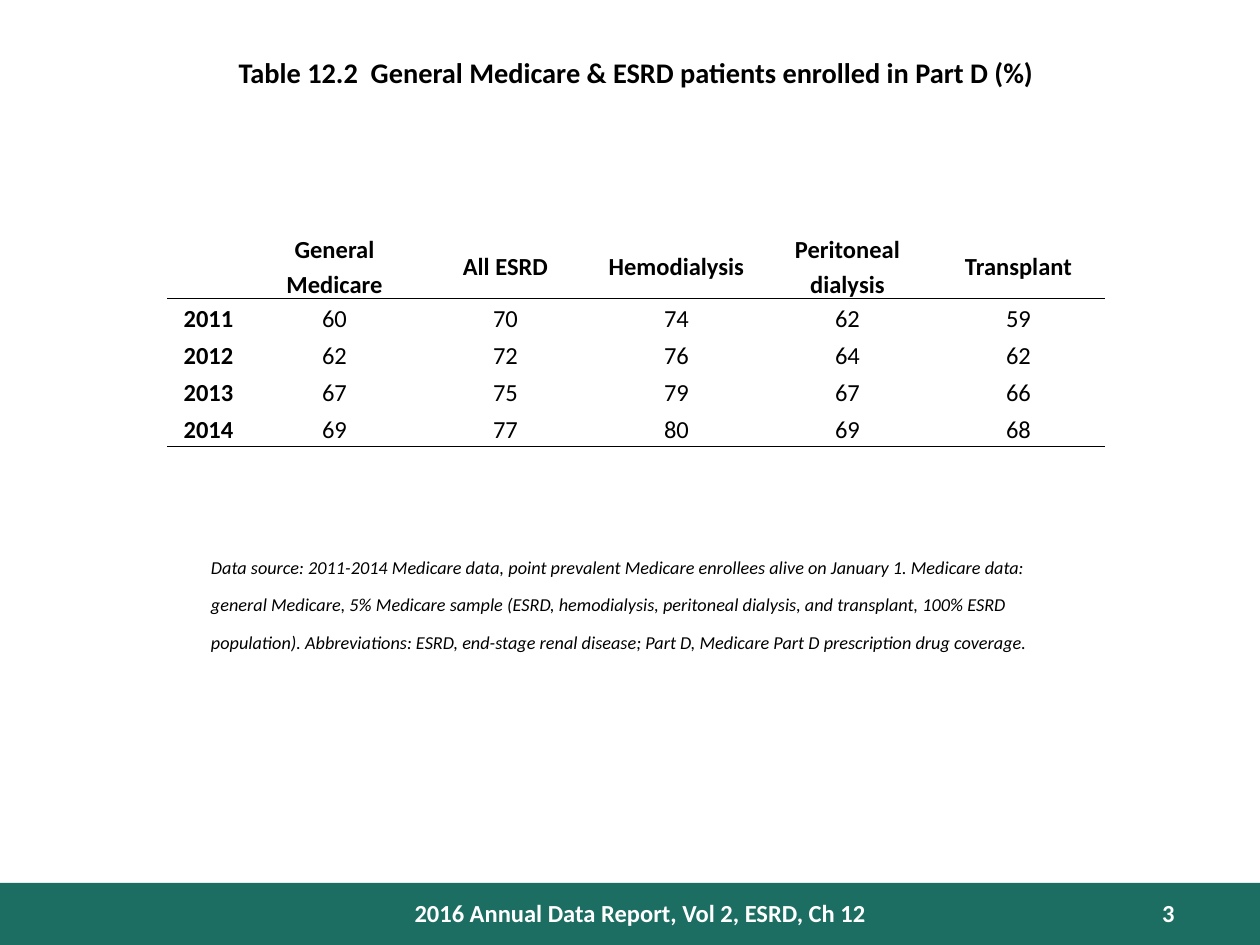
from lxml import etree
from pptx import Presentation
from pptx.dml.color import RGBColor
from pptx.enum.shapes import MSO_SHAPE
from pptx.enum.text import MSO_ANCHOR, PP_ALIGN
from pptx.oxml.ns import qn
from pptx.util import Pt

PX = 914400 // 126
RECT = MSO_SHAPE.RECTANGLE
MIDDLE = MSO_ANCHOR.MIDDLE
LEFT, CENTER, RIGHT = PP_ALIGN.LEFT, PP_ALIGN.CENTER, PP_ALIGN.RIGHT
COLORS = {"green": "1C6E62", "white": "FFFFFF", "black": "000000"}

HEADS = ["", "General Medicare", "All ESRD", "Hemodialysis",
         "Peritoneal dialysis", "Transplant"]
RATES = [
    ["2011", "60", "70", "74", "62", "59"],
    ["2012", "62", "72", "76", "64", "62"],
    ["2013", "67", "75", "79", "67", "66"],
    ["2014", "69", "77", "80", "69", "68"],
]
NOTE = (
    "Data source: 2011-2014 Medicare data, point prevalent Medicare enrollees "
    "alive on January 1. Medicare data: general Medicare, 5% Medicare sample "
    "(ESRD, hemodialysis, peritoneal dialysis, and transplant, 100% ESRD "
    "population). Abbreviations: ESRD, end-stage renal disease; Part D, "
    "Medicare Part D prescription drug coverage."
)


class Deck:
    def __init__(self, wide, high):
        self.prs = Presentation()
        self.prs.slide_width = wide * PX
        self.prs.slide_height = high * PX
        self.slide = self.prs.slides.add_slide(self.prs.slide_layouts[6])
        self.font = "Calibri"

    def color(self, name):
        return RGBColor.from_string(COLORS[name])

    def put_text(self, para, text, size, color="black", align=CENTER, lift=0, **form):
        para.alignment = align
        run = para.add_run()
        run.text = text
        style = {"name": self.font, "size": Pt(size), **form}
        for key, value in style.items():
            setattr(run.font, key, value)
        run.font.color.rgb = self.color(color)
        if lift:
            run._r.get_or_add_rPr().set("baseline", str(lift * 1000))

    def band(self, left, top, wide, high, color):
        box = self.slide.shapes.add_shape(
            RECT, left * PX, top * PX, wide * PX, high * PX)
        box.shadow.inherit = False
        box.fill.solid()
        box.fill.fore_color.rgb = self.color(color)
        box.line.fill.background()

    def label(self, left, top, wide, high, text, size, inset=12, **form):
        box = self.slide.shapes.add_textbox(
            left * PX, top * PX, wide * PX, high * PX)
        frame = box.text_frame
        frame.word_wrap = True
        frame.margin_left = inset * PX
        self.put_text(frame.paragraphs[0], text, size, **form)

    def rule(self, cell, side):
        line = etree.SubElement(cell._tc.get_or_add_tcPr(), qn("a:" + side), w=str(Pt(1)))
        fill = etree.SubElement(line, qn("a:solidFill"))
        etree.SubElement(fill, qn("a:srgbClr"), val=COLORS["black"])

    def table(self, left, top, cols, high, rows):
        last = len(rows) - 1
        grid = self.slide.shapes.add_table(
            len(rows), len(cols), left * PX, top * PX,
            sum(cols) * PX, high * len(rows) * PX).table
        grid.first_row = grid.horz_banding = False
        for col, wide in zip(grid.columns, cols):
            col.width = wide * PX
        edges = {0: "lnB", 1: "lnT", last: "lnB"}
        cell_style = {"margin_left": 9 * PX, "margin_right": 9 * PX,
                      "margin_top": 0, "margin_bottom": 0,
                      "vertical_anchor": MIDDLE}
        for r, row in enumerate(rows):
            grid.rows[r].height = high * PX
            for c, text in enumerate(row):
                cell = grid.cell(r, c)
                for key, value in cell_style.items():
                    setattr(cell, key, value)
                if r in edges:
                    self.rule(cell, edges[r])
                cell.fill.background()
                if text:
                    para = cell.text_frame.paragraphs[0]
                    para.line_spacing = 1.15
                    self.put_text(para, text, 14, bold=r == 0 or c == 0)


def main():
    deck = Deck(1260, 945)
    deck.band(0, 883, 1260, 62, "green")
    deck.label(0, 43, 1260, 53,
               "Table 12.2  General Medicare & ESRD patients enrolled in Part D (%)",
               28, inset=24, lift=30, bold=True)
    deck.label(399, 892, 483, 42, "2016 Annual Data Report, Vol 2, ESRD, Ch 12",
               14, color="white", bold=True)
    deck.label(1061, 892, 126, 38, "3", 14, color="white", align=RIGHT, bold=True)
    deck.label(199, 546, 872, 115, NOTE, 18, align=LEFT, lift=30, italic=True)
    deck.table(168, 231, [81] + [171] * 5, 37, [HEADS] + RATES)
    deck.prs.save("out.pptx")


if __name__ == "__main__":
    main()
